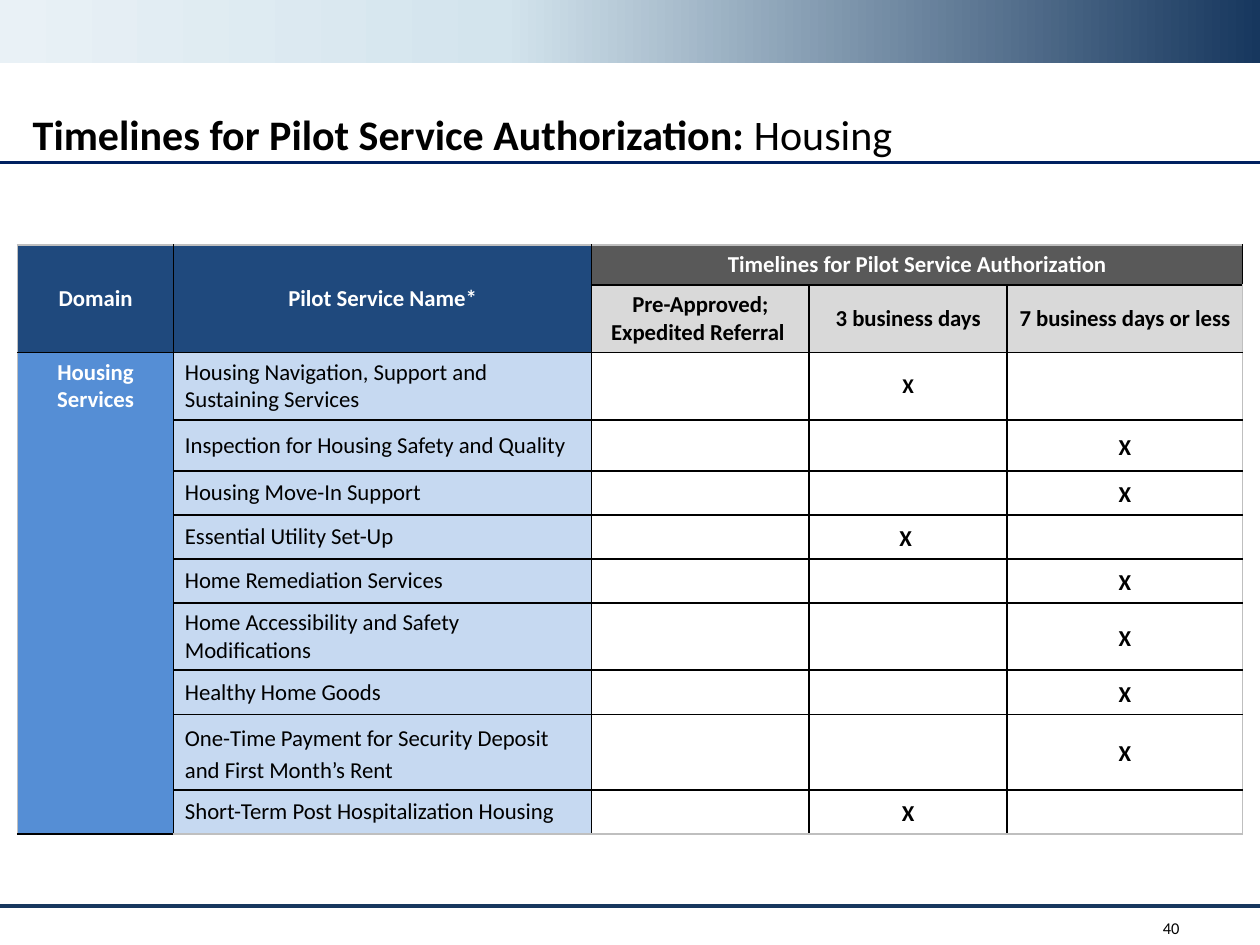
from copy import deepcopy

from lxml.etree import SubElement
from pptx import Presentation
from pptx.dml.color import RGBColor as RGB
from pptx.enum.shapes import MSO_CONNECTOR as CONN, MSO_SHAPE as SHAPE
from pptx.enum.text import MSO_ANCHOR as ANCHOR, PP_ALIGN as ALIGN
from pptx.oxml.ns import qn
from pptx.util import Pt

THEME = {
    "font": "Calibri", "title": 24, "body": 13, "mark": 12, "number": 9.4,
    "black": "000000", "white": "FFFFFF", "navy": "17375E", "rule": "002060",
    "header": "1F497D", "group": "595959", "subhead": "D9D9D9",
    "domain": "558ED5", "service": "C6D9F1", "edge": "BFBFBF",
    "band": [(0, "17375E"), (0.6, "D3E4ED"), (1, "E9F1F6")],
}


def style(font, size, color="black", bold=False):
    font.name = THEME["font"]
    font.size = Pt(THEME[size])
    font.bold = bold
    font.color.rgb = RGB.from_string(THEME[color])


def border(cell, side, color):
    ln = SubElement(cell._tc.get_or_add_tcPr(), qn(f"a:{side}"), w=str(Pt(1)))
    fill = SubElement(ln, qn("a:solidFill"))
    SubElement(fill, qn("a:srgbClr"), val=THEME[color])


prs = Presentation()
prs.slide_width, prs.slide_height = Pt(720), Pt(540)
s = prs.slides.add_slide(prs.slide_layouts[6])

band = s.shapes.add_shape(SHAPE.RECTANGLE, 0, 0, Pt(720), Pt(36))
band.shadow.inherit = False
band.line.fill.background()
band.fill.gradient()
band.fill.gradient_angle = 180
stop_list = band._element.spPr.find(".//" + qn("a:gsLst"))
stop_list.append(deepcopy(stop_list[-1]))
for stop, (position, color) in zip(band.fill.gradient_stops, THEME["band"]):
    stop.position = position
    stop.color.rgb = RGB.from_string(color)

for y, color, width in [(517.7, "navy", 2.25), (92.9, "rule", 2)]:
    rule = s.shapes.add_connector(CONN.STRAIGHT, 0, Pt(y), Pt(720), Pt(y))
    rule.line.color.rgb = RGB.from_string(THEME[color])
    rule.line.width = Pt(width)
    SubElement(rule._element.spPr, qn("a:effectLst"))

boxes = [
    ((640, 519.8, 41.8, 20.9), ANCHOR.MIDDLE, ALIGN.RIGHT, None, "number",
     [("40", False)]),
    ((10.8, 61.2, 581.8, 41), ANCHOR.TOP, ALIGN.LEFT, 0.9, "title",
     [("Timelines for Pilot Service Authorization: ", True), ("Housing", False)]),
]
for place, anchor, align, spacing, size, runs in boxes:
    sp = s.shapes.add_textbox(*map(Pt, place))
    tf = sp.text_frame
    tf.word_wrap = True
    tf.vertical_anchor = anchor
    tf.margin_left = tf.margin_right = Pt(7.9)
    tf.margin_top = tf.margin_bottom = Pt(4)
    p = tf.paragraphs[0]
    p.alignment = align
    p.line_spacing = spacing
    for text, bold in runs:
        r = p.add_run()
        r.text = text
        style(r.font, size, bold=bold)

col_widths = [89.2, 238.8, 124.4, 113.2, 134.4]
row_heights = [22.3, 38.3, 38.7, 29, 25, 25, 25, 38.3, 25, 43.2, 25]
services = [
    ("Housing Navigation, Support and Sustaining Services", 3, "X"),
    ("Inspection for Housing Safety and Quality", 4, "X"),
    ("Housing Move-In Support", 4, "X"),
    ("Essential Utility Set-Up", 3, "X "),
    ("Home Remediation Services", 4, "X"),
    ("Home Accessibility and Safety Modifications", 4, "X"),
    ("Healthy Home Goods", 4, "X"),
    ("One-Time Payment for Security Deposit and First Month’s Rent", 4, "X"),
    ("Short-Term Post Hospitalization Housing", 3, "X"),
]
rows = [
    ["Domain", "Pilot Service Name*", "Timelines for Pilot Service Authorization", "", ""],
    ["", "", "Pre-Approved; Expedited Referral ", "3 business days", "7 business days or less"],
]
for name, column, mark in services:
    rows.append(["", name] + [mark if c == column else "" for c in (2, 3, 4)])
rows[2][0] = "Housing Services"

last_row, last_col = len(rows) - 1, len(col_widths) - 1
frame = s.shapes.add_table(len(rows), len(col_widths), Pt(10), Pt(140),
                           Pt(sum(col_widths)), Pt(sum(row_heights)))
table = frame.table
table.first_row = table.horz_banding = False
table_props = table._tbl.tblPr
table_props.remove(table_props.find(qn("a:tableStyleId")))
for column, width in zip(table.columns, col_widths):
    column.width = Pt(width)
for row, height in zip(table.rows, row_heights):
    row.height = Pt(height)

for i, row in enumerate(rows):
    for j, text in enumerate(row):
        cell = table.cell(i, j)
        is_mark = i > 1 and j > 1
        is_name = i > 1 and j == 1
        if is_mark:
            fill = "white"
        elif i > 1:
            fill = "service" if is_name else "domain"
        elif j < 2:
            fill = "header"
        else:
            fill = "subhead" if i else "group"
        sides = {"lnL": j == 0, "lnR": j == last_col, "lnT": i == 0, "lnB": i == last_row}
        for side, outer in sides.items():
            border(cell, side, "edge" if outer else "black")
        cell.fill.solid()
        cell.fill.fore_color.rgb = RGB.from_string(THEME[fill])
        cell.margin_left = cell.margin_right = Pt(6.5)
        cell.margin_top = cell.margin_bottom = Pt(3.6)
        cell.vertical_anchor = ANCHOR.TOP if fill == "domain" else ANCHOR.MIDDLE
        p = cell.text_frame.paragraphs[0]
        if not text:
            p._p.get_or_add_endParaRPr().set("sz", str(THEME["mark"] * 100))
            continue
        p.text = text
        p.alignment = ALIGN.LEFT if is_name else ALIGN.CENTER
        if (is_mark and i > 2) or text.startswith("One-Time"):
            p.line_spacing = 1.15
        color = "white" if fill in ("header", "group", "domain") else "black"
        size = "mark" if is_mark and i == 2 else "body"
        style(p.font, size, color, not is_name)

table.cell(0, 0).merge(table.cell(1, 0))
table.cell(0, 1).merge(table.cell(1, 1))
table.cell(0, 2).merge(table.cell(0, last_col))
table.cell(2, 0).merge(table.cell(last_row, 0))

prs.save("out.pptx")
